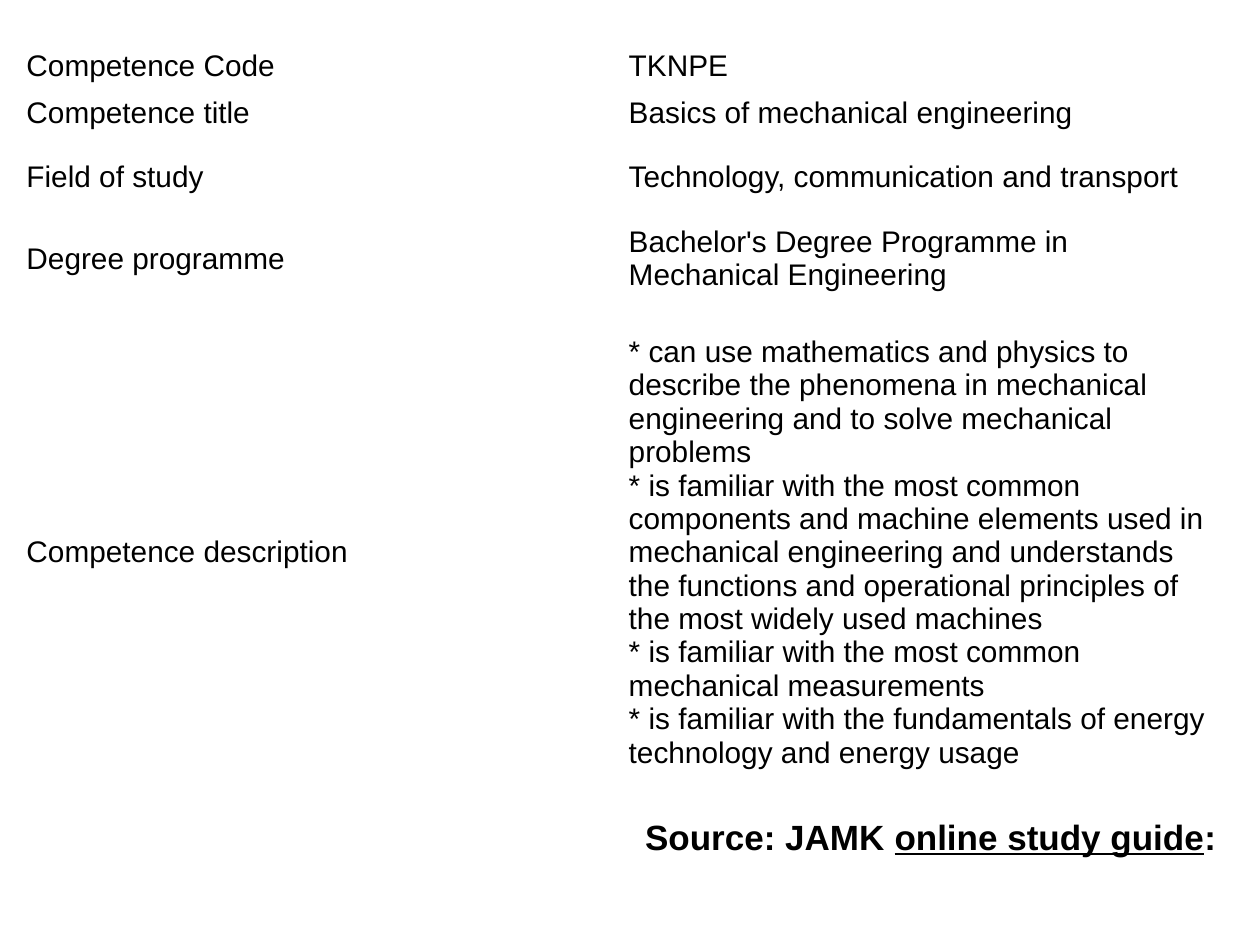
from pptx import Presentation
from pptx.dml.color import RGBColor
from pptx.enum.text import MSO_ANCHOR, MSO_AUTO_SIZE
from pptx.util import Inches, Pt

INK = "000000"
ROWS = [
    (0.37, "Competence Code", ["TKNPE"]),
    (0.37, "Competence title", ["Basics of mechanical engineering"]),
    (0.65, "Field of study", ["Technology, communication and transport"]),
    (0.65, "Degree programme",
     ["Bachelor's Degree Programme in Mechanical Engineering"]),
    (4.01, "Competence description", [
        "* can use mathematics and physics to describe the phenomena in "
        "mechanical engineering and to solve mechanical problems",
        "* is familiar with the most common components and machine elements "
        "used in mechanical engineering and understands the functions and "
        "operational principles of the most widely used machines",
        "* is familiar with the most common mechanical measurements",
        "* is familiar with the fundamentals of energy technology and "
        "energy usage",
    ]),
]


def paint(target, color):
    target.rgb = RGBColor.from_string(color)


def add_run(para, text, size, bold=False, line=False):
    run = para.add_run()
    run.text = text
    font = run.font
    font.name, font.size = "Arial", Pt(size)
    font.bold, font.underline = bold, line
    paint(font.color, INK)


def fill_cell(cell, lines):
    """Write the lines into one paragraph, parted by line breaks."""
    cell.fill.background()
    cell.vertical_anchor = MSO_ANCHOR.MIDDLE
    cell.margin_left = cell.margin_right = Inches(0.09)
    cell.margin_top = cell.margin_bottom = Inches(0.05)
    para = cell.text_frame.paragraphs[0]
    for i, text in enumerate(lines):
        if i:
            para.add_line_break()
        add_run(para, text, 17)


def add_grid(slide):
    high = sum(row[0] for row in ROWS)
    grid = slide.shapes.add_table(
        len(ROWS), 2, Inches(0.12), Inches(0.34),
        Inches(9.57), Inches(high)).table
    grid.first_row = grid.horz_banding = False
    for col in grid.columns:
        col.width = Inches(4.78)
    for i, (tall, label, lines) in enumerate(ROWS):
        grid.rows[i].height = Inches(tall)
        fill_cell(grid.cell(i, 0), [label])
        fill_cell(grid.cell(i, 1), lines)


def add_source(slide):
    box = slide.shapes.add_textbox(
        Inches(5.12), Inches(6.47), Inches(8.24), Inches(0.34))
    frame = box.text_frame
    frame.word_wrap = True
    frame.auto_size = MSO_AUTO_SIZE.SHAPE_TO_FIT_TEXT
    frame.margin_left = frame.margin_right = 0
    frame.margin_top = frame.margin_bottom = 0
    para = frame.paragraphs[0]
    add_run(para, "Source: JAMK ", 20, bold=True)
    add_run(para, "online study guide", 20, bold=True, line=True)
    add_run(para, ":", 20, bold=True)


def main():
    deck = Presentation()
    deck.slide_width, deck.slide_height = Inches(10), Inches(7.5)
    slide = deck.slides.add_slide(deck.slide_layouts[6])
    back = slide.background.fill
    back.solid()
    paint(back.fore_color, "FFFFFF")
    add_grid(slide)
    add_source(slide)
    deck.save("out.pptx")


if __name__ == "__main__":
    main()
